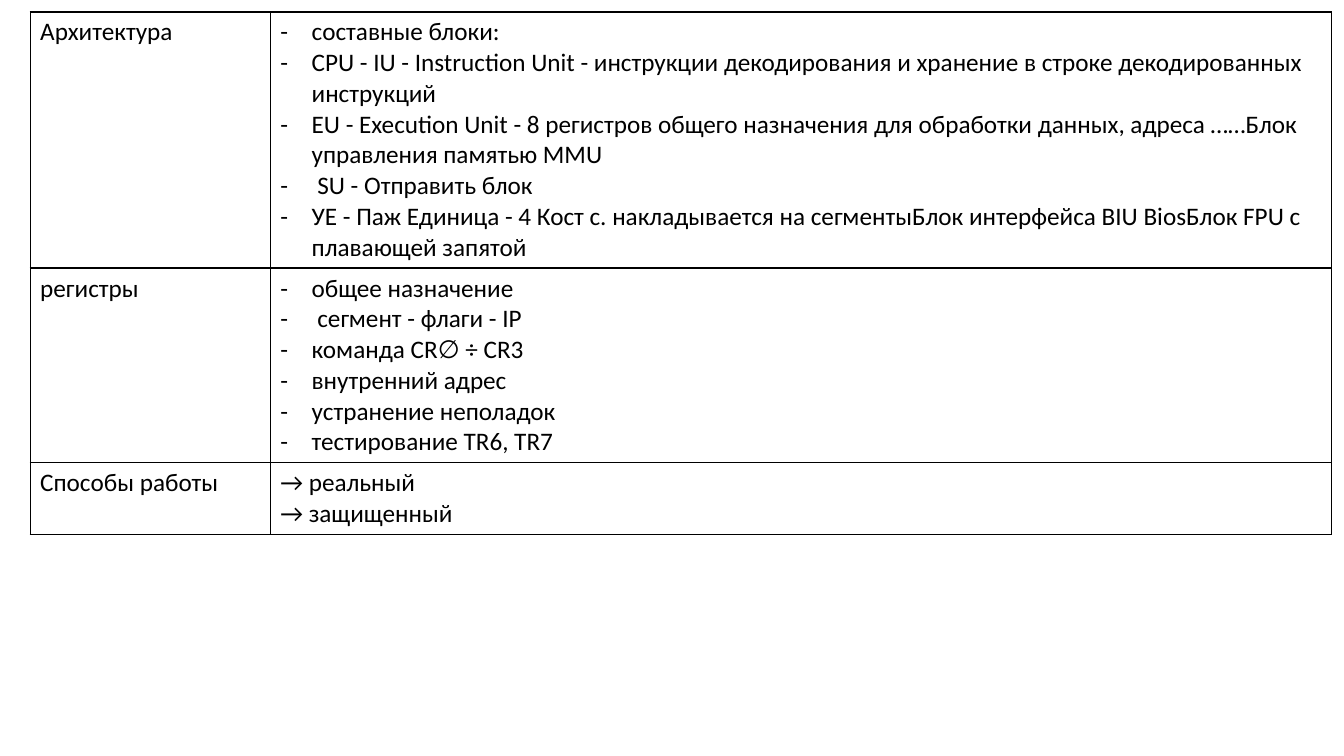
"""Build a slide with a table of processor architecture, registers and modes."""
from pptx import Presentation
from pptx.dml.color import RGBColor
from pptx.enum.text import MSO_ANCHOR as Anchor
from pptx.oxml import parse_xml
from pptx.oxml.ns import nsdecls
from pptx.util import Cm, Pt

INK = "000000"
INDENT = Cm(0.79)
TOPICS = [
    ("Архитектура", 6.45, True, [
        "составные блоки:",
        "CPU - IU - Instruction Unit - инструкции декодирования и хранение в строке декодированных инструкций",
        "EU - Execution Unit - 8 регистров общего назначения для обработки данных, адреса ……Блок управления памятью MMU",
        " SU - Отправить блок",
        "УЕ - Паж Единица - 4 Кост с. накладывается на сегментыБлок интерфейса BIU BiosБлок FPU с плавающей запятой",
    ]),
    ("регистры", 4.9, True, [
        "общее назначение",
        " сегмент - флаги - IP",
        "команда CR∅ ÷ CR3",
        "внутренний адрес",
        "устранение неполадок",
        "тестирование TR6, TR7",
    ]),
    ("Способы работы", 1.8, False, ["→ реальный", "→ защищенный"]),
]


def write_cell(cell, lines, dashed=False):
    cell_props = cell._tc.get_or_add_tcPr()
    for side in ("lnL", "lnR", "lnT", "lnB"):
        cell_props.append(parse_xml(
            f'<a:{side} {nsdecls("a")} w="{Pt(1)}"><a:solidFill>'
            f'<a:srgbClr val="{INK}"/></a:solidFill></a:{side}>'))
    cell.fill.background()
    for number, line in enumerate(lines):
        frame = cell.text_frame
        paragraph = frame.add_paragraph() if number else frame.paragraphs[0]
        if dashed:
            paragraph_props = paragraph._p.get_or_add_pPr()
            paragraph_props.set("marL", str(INDENT))
            paragraph_props.set("indent", str(-INDENT))
            paragraph_props.append(parse_xml(f'<a:buFont {nsdecls("a")} typeface="Calibri"/>'))
            paragraph_props.append(parse_xml(f'<a:buChar {nsdecls("a")} char="-"/>'))
        run = paragraph.add_run()
        run.text = line
        run.font.name = "Calibri"
        run.font.size = Pt(18)
        run.font.color.rgb = RGBColor.from_string(INK)


deck = Presentation()
deck.slide_width, deck.slide_height = Cm(33.87), Cm(19.05)
slide = deck.slides.add_slide(deck.slide_layouts[6])

processor = slide.shapes.add_table(
    len(TOPICS), 2, Cm(0.76), Cm(0.3), Cm(32.8), Cm(13.15)).table
processor.first_row = False
processor.horz_banding = False
processor.columns[0].width = Cm(6.05)
processor.columns[1].width = Cm(26.75)

for row, (topic, height, dashed, details) in enumerate(TOPICS):
    processor.rows[row].height = Cm(height)
    write_cell(processor.cell(row, 0), [topic])
    write_cell(processor.cell(row, 1), details, dashed)
processor.cell(len(TOPICS) - 1, 1).vertical_anchor = Anchor.MIDDLE

deck.save("out.pptx")
